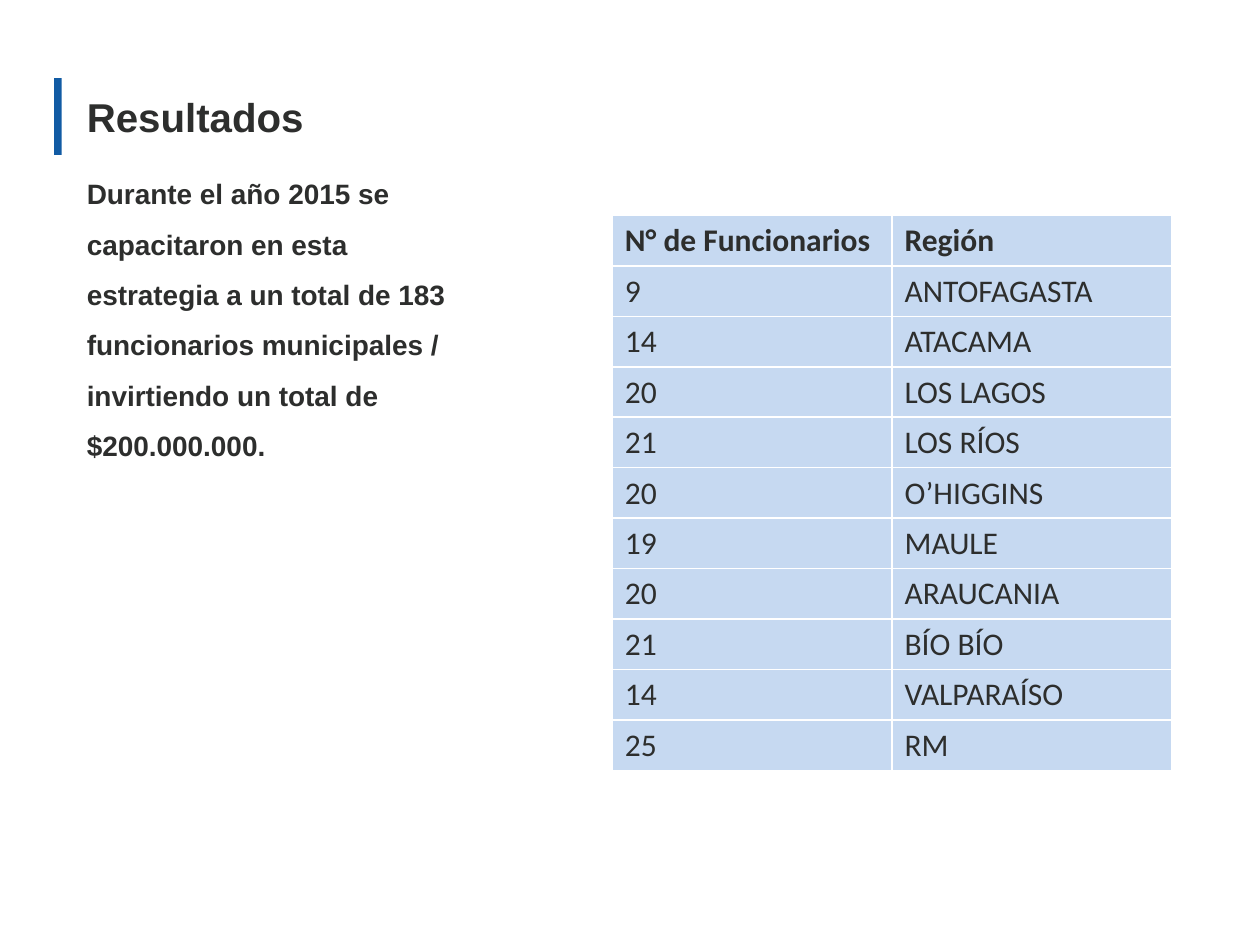
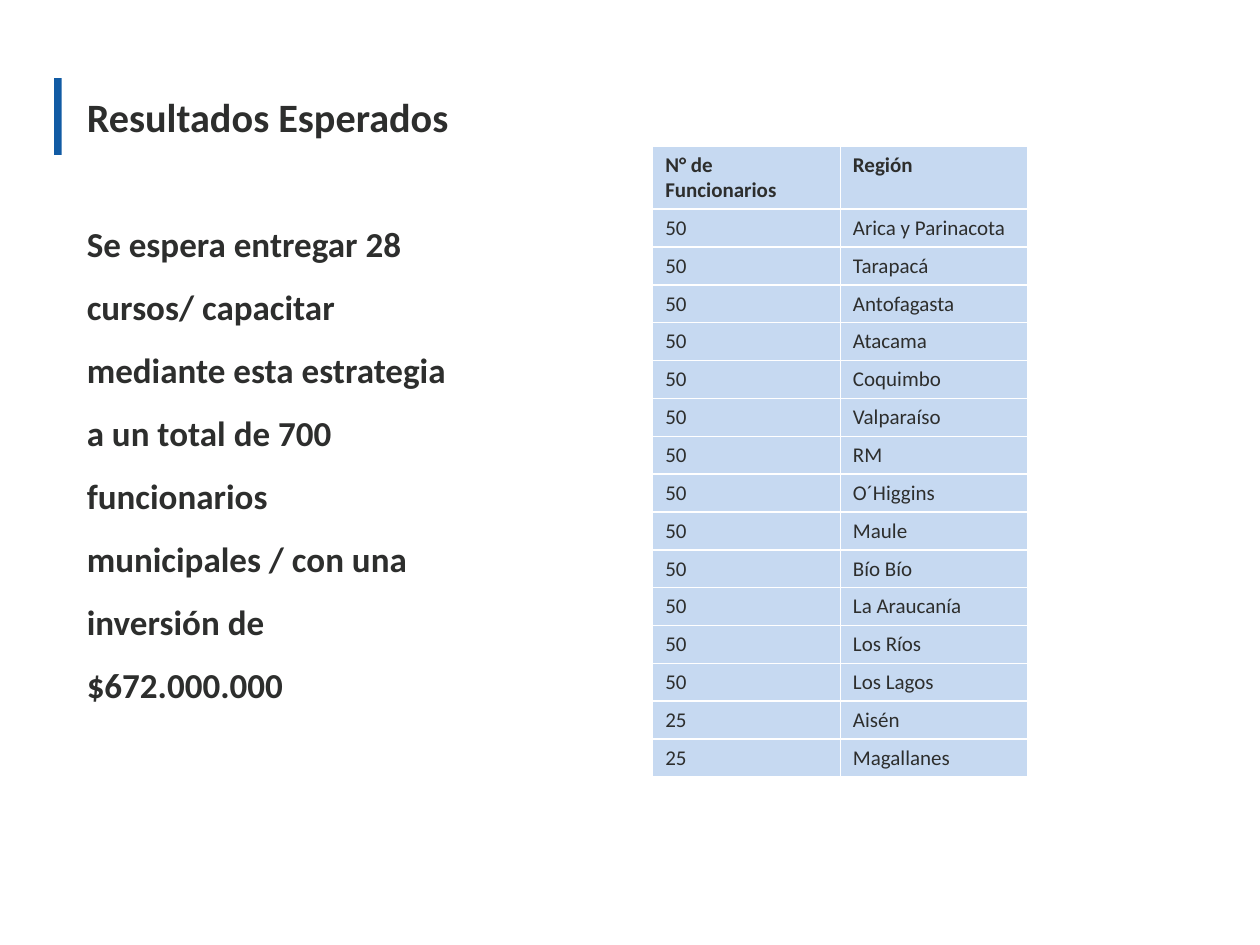
from pptx import Presentation
from pptx import util as u
from pptx.dml.color import RGBColor
from pptx.enum import shapes, text

# Content
HEAD = ("N° de Funcionarios", "Región")
DONE = [
    (9, "ANTOFAGASTA"), (14, "ATACAMA"), (20, "LOS LAGOS"), (21, "LOS RÍOS"),
    (20, "O’HIGGINS"), (19, "MAULE"), (20, "ARAUCANIA"), (21, "BÍO BÍO"),
    (14, "VALPARAÍSO"), (25, "RM"),
]
FULL = ["Arica y Parinacota", "Tarapacá", "Antofagasta", "Atacama", "Coquimbo",
        "Valparaíso", "RM", "O´Higgins", "Maule", "Bío Bío", "La Araucanía",
        "Los Ríos", "Los Lagos"]
HALF = ["Aisén", "Magallanes"]
GOAL = [(50, name) for name in FULL] + [(25, name) for name in HALF]

# Table: left, top, column width, header height, row height
PAGES = [
    dict(title="Resultados", font="Arial", size=16, box=(1.22, 3.85),
         body="Durante el año 2015 se capacitaron en esta estrategia a un total "
              "de 183 funcionarios municipales / invirtiendo un total de "
              "$200.000.000.",
         rows=DONE, grid=(4.86, 1.71, 2.22, 0.4, 0.4), cell=18),
    dict(title="Resultados Esperados", font="Calibri", size=20, box=(1.55, 1.77),
         body="Se espera entregar 28 cursos/ capacitar mediante esta estrategia "
              "a un total de 700 funcionarios municipales / con una inversión "
              "de $672.000.000",
         rows=GOAL, grid=(5.18, 1.16, 1.49, 0.5, 0.3), cell=12),
]

# Shared look
INK, BLUE, PALE = "2D2E2D", "115BA4", "C6D9F1"
LEFT = 0.59


def paint(fill, hue):
    fill.solid()
    fill.fore_color.rgb = RGBColor.from_string(hue)


def style(par, font, size, bold):
    par.font.name, par.font.size, par.font.bold = font, u.Pt(size), bold
    par.font.color.rgb = RGBColor.from_string(INK)


def write(slide, words, at, font, size):
    frame = slide.shapes.add_textbox(*map(u.Inches, at)).text_frame
    frame.word_wrap = True
    frame.text = words
    style(frame.paragraphs[0], font, size, True)
    return frame


def add_bar(slide):
    bar = slide.shapes.add_shape(shapes.MSO_SHAPE.RECTANGLE,
                                 *map(u.Inches, (0.43, 0.62, 0.06, 0.61)))
    bar.shadow.inherit = False
    paint(bar.fill, BLUE)
    bar.line.fill.background()


def add_grid(slide, rows, grid, size):
    left, top, wide, first, step = grid
    rows = [HEAD] + rows
    high = first + step * (len(rows) - 1)
    # The default table style draws the white rules
    table = slide.shapes.add_table(
        len(rows), len(HEAD),
        *map(u.Inches, (left, top, wide * len(HEAD), high))).table
    table.horz_banding = False
    for r, row in enumerate(rows):
        table.rows[r].height = u.Inches(step if r else first)
        for c, value in enumerate(row):
            cell = table.cell(r, c)
            cell.text = str(value)
            paint(cell.fill, PALE)
            style(cell.text_frame.paragraphs[0], "Calibri", size, r == 0)


def build(deck, page):
    slide = deck.slides.add_slide(deck.slide_layouts[6])
    add_bar(slide)
    title = write(slide, page["title"], (LEFT, 0.3, 8.91, 1.25), page["font"], 23)
    title.vertical_anchor = text.MSO_ANCHOR.MIDDLE
    top, high = page["box"]
    body = write(slide, page["body"], (LEFT, top, 3.15, high),
                 page["font"], page["size"])
    body.paragraphs[0].line_spacing = 1.5
    add_grid(slide, page["rows"], page["grid"], page["cell"])


def main():
    deck = Presentation()
    deck.slide_width, deck.slide_height = u.Inches(10), u.Inches(7.5)
    for page in PAGES:
        build(deck, page)
    deck.save("out.pptx")


if __name__ == "__main__":
    main()
